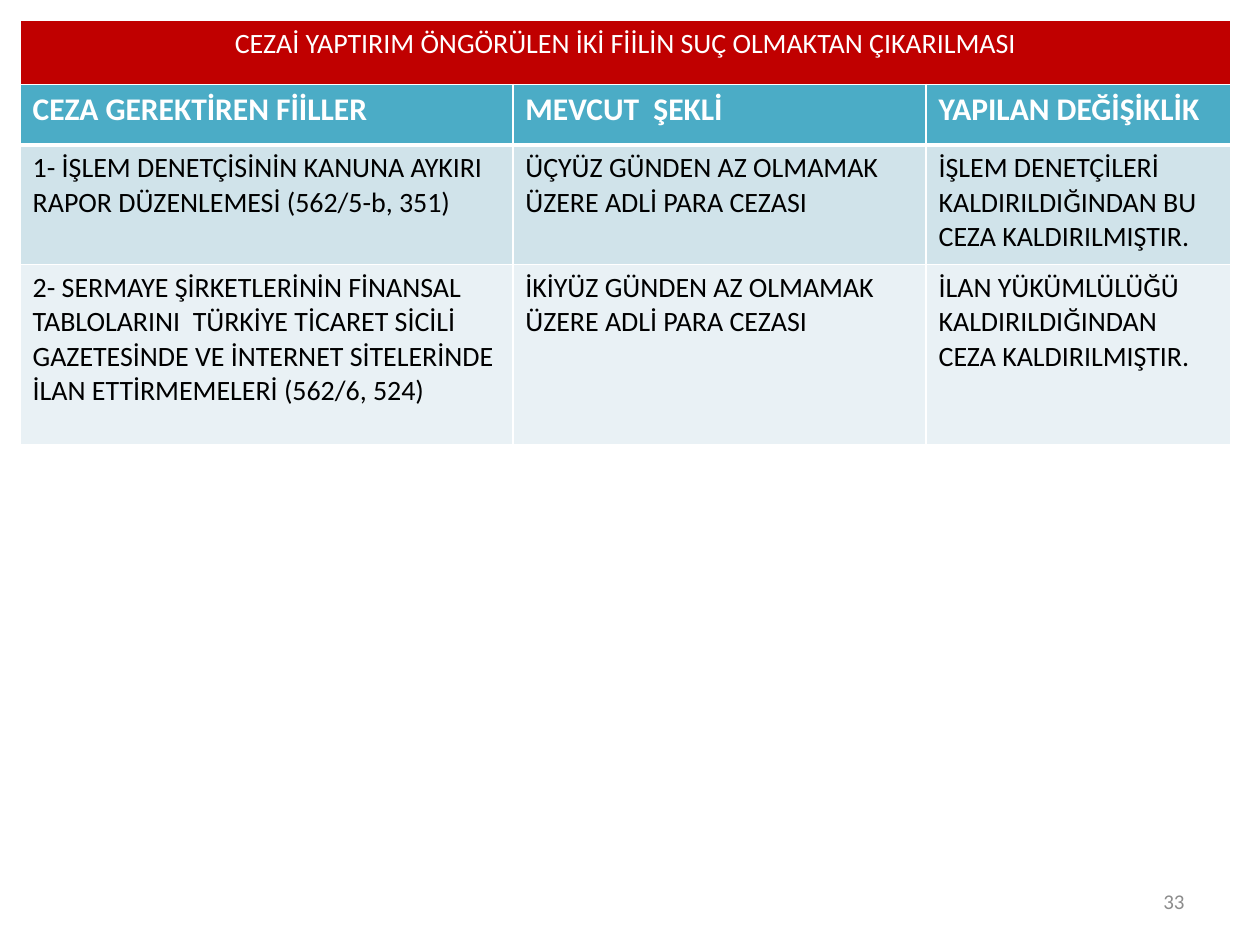
"""Build a slide with a banner and a table of penalties that were lifted."""
from lxml import etree
from pptx import Presentation, util as u
from pptx.dml.color import RGBColor
from pptx.enum import text
from pptx.oxml.ns import qn

FONT = "Calibri"
WHITE, BLACK, GRAY = "FFFFFF", "000000", "8C8C8C"
RED, TEAL, BANDS = "C00000", "4BACC6", ("D0E3EA", "E9F1F5")
MARGIN, BANNER_TOP, TABLE_TOP = 0.16, 0.16, 0.67
COLUMNS = (3.91, 3.28, 2.42)
BANNER_ROWS, TABLE_ROWS = (0.55,), (0.48, 0.95, 1.43)

BANNER = [["CEZAİ YAPTIRIM ÖNGÖRÜLEN İKİ FİİLİN SUÇ OLMAKTAN ÇIKARILMASI"]]
PENALTIES = [
    ["CEZA GEREKTİREN FİİLLER", "MEVCUT  ŞEKLİ", "YAPILAN DEĞİŞİKLİK"],
    ["1- İŞLEM DENETÇİSİNİN KANUNA AYKIRI RAPOR DÜZENLEMESİ (562/5-b, 351)",
     "ÜÇYÜZ GÜNDEN AZ OLMAMAK ÜZERE ADLİ PARA CEZASI",
     "İŞLEM DENETÇİLERİ KALDIRILDIĞINDAN BU CEZA KALDIRILMIŞTIR."],
    ["2- SERMAYE ŞİRKETLERİNİN FİNANSAL TABLOLARINI  TÜRKİYE TİCARET SİCİLİ "
     "GAZETESİNDE VE İNTERNET SİTELERİNDE İLAN ETTİRMEMELERİ (562/6, 524)",
     "İKİYÜZ GÜNDEN AZ OLMAMAK ÜZERE ADLİ PARA CEZASI",
     "İLAN YÜKÜMLÜLÜĞÜ KALDIRILDIĞINDAN CEZA KALDIRILMIŞTIR."],
]
PAGE_NUMBER = "33"


def color(value):
    return RGBColor.from_string(value)


def style_paragraph(paragraph, size, ink, bold=False, align=text.PP_ALIGN.LEFT):
    paragraph.alignment = align
    font = paragraph.font
    font.name, font.size, font.bold = FONT, u.Pt(size), bold
    font.color.rgb = color(ink)


def set_borders(cell, widths):
    properties = cell._tc.get_or_add_tcPr()
    for side, width in zip("LRTB", widths):
        line = etree.SubElement(properties, qn(f"a:ln{side}"), w=str(u.Pt(width)))
        fill = etree.SubElement(line, qn("a:solidFill"))
        etree.SubElement(fill, qn("a:srgbClr"), val=WHITE)


def add_grid(slide, top, widths, heights, content, styles):
    table = slide.shapes.add_table(
        len(heights), len(widths), u.Inches(MARGIN), u.Inches(top),
        u.Inches(sum(widths)), u.Inches(sum(heights))).table
    for column, width in zip(table.columns, widths):
        column.width = u.Inches(width)
    for index, (row, height, words, style) in enumerate(
            zip(table.rows, heights, content, styles)):
        row.height = u.Inches(height)
        fill, *lettering = style
        above = 3 if index == 1 else 1
        below = 3 if index == 0 else 1
        for cell, wording in zip(row.cells, words):
            cell.text = wording
            set_borders(cell, (1, 1, above, below))
            cell.fill.solid()
            cell.fill.fore_color.rgb = color(fill)
            style_paragraph(cell.text_frame.paragraphs[0], *lettering)


def add_page_number(slide):
    box = slide.shapes.add_textbox(
        u.Inches(7.17), u.Inches(6.95), u.Inches(2.33), u.Inches(0.4))
    frame = box.text_frame
    frame.word_wrap = True
    frame.vertical_anchor = text.MSO_ANCHOR.MIDDLE
    frame.text = PAGE_NUMBER
    style_paragraph(frame.paragraphs[0], 12, GRAY, align=text.PP_ALIGN.RIGHT)


def main():
    presentation = Presentation()
    presentation.slide_width, presentation.slide_height = u.Inches(10), u.Inches(7.5)
    slide = presentation.slides.add_slide(presentation.slide_layouts[6])
    add_grid(slide, BANNER_TOP, (sum(COLUMNS),), BANNER_ROWS, BANNER,
             [(RED, 16, WHITE, False, text.PP_ALIGN.CENTER)])
    add_grid(slide, TABLE_TOP, COLUMNS, TABLE_ROWS, PENALTIES,
             [(TEAL, 18, WHITE, True)] + [(band, 16, BLACK) for band in BANDS])
    add_page_number(slide)
    presentation.save("out.pptx")


if __name__ == "__main__":
    main()
